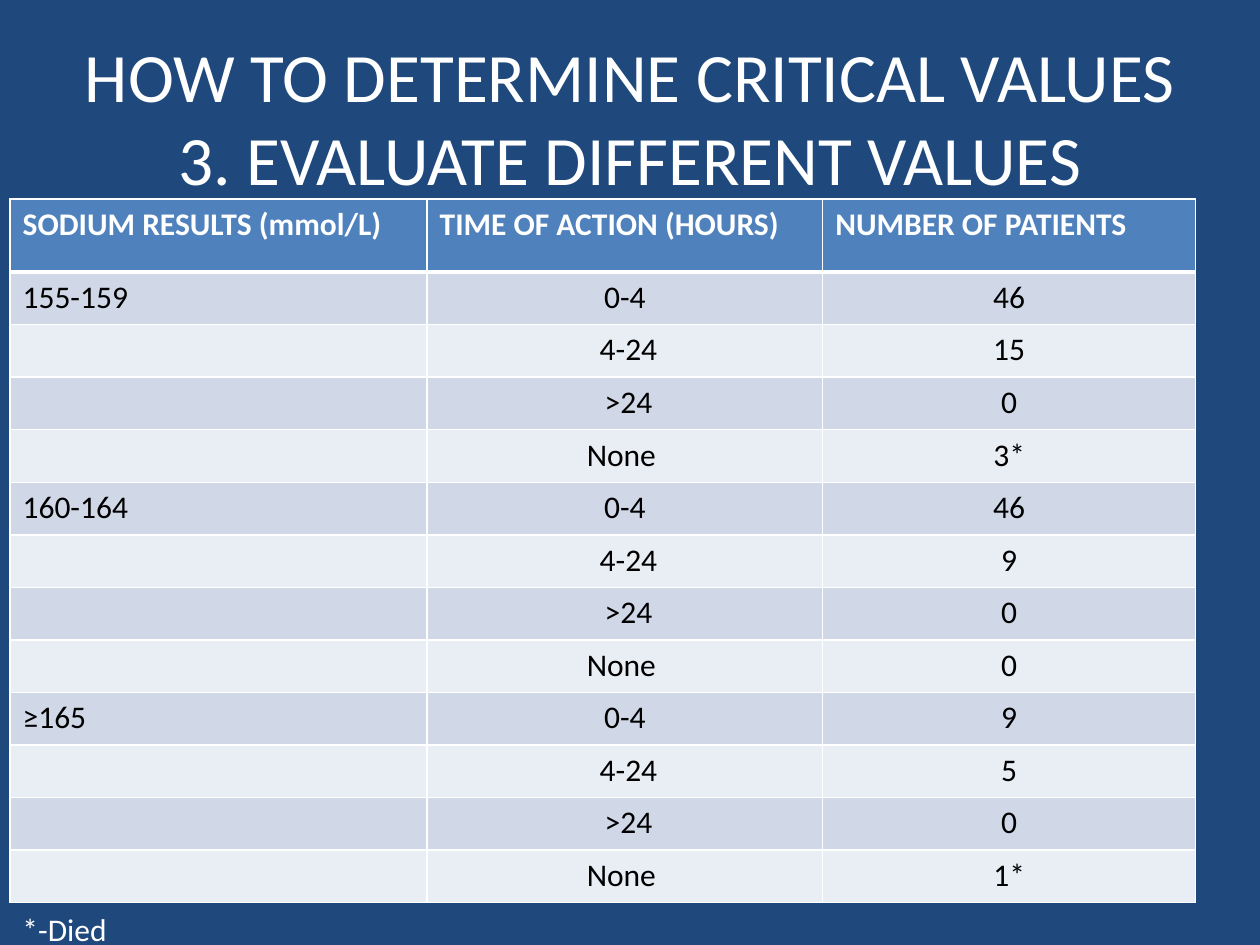
from dataclasses import dataclass
from typing import Any

from lxml import etree
from pptx import Presentation
from pptx import util as u
from pptx.dml.color import RGBColor
from pptx.enum import text
from pptx.oxml import ns

NAVY = RGBColor(0x1F, 0x49, 0x7D)
BLUE = RGBColor(0x4F, 0x81, 0xBD)
BAND_DARK = RGBColor(0xD0, 0xD8, 0xE8)
BAND_LIGHT = RGBColor(0xE9, 0xED, 0xF4)
WHITE = RGBColor(0xFF, 0xFF, 0xFF)
BLACK = RGBColor(0, 0, 0)

TITLE_LINES = ["HOW TO DETERMINE CRITICAL VALUES", "3. EVALUATE DIFFERENT VALUES"]
HEADINGS = ["SODIUM RESULTS (mmol/L)", "TIME OF ACTION (HOURS)", "NUMBER OF PATIENTS"]
ACTION_TIMES = ["0-4", " 4-24", " >24", "None "]
PATIENTS = {
    "155-159": ["46", "15", "0", "3*"],
    "160-164": ["46", "9", "0", "0"],
    "≥165": ["9", "5", "0", "1*"],
}


@dataclass
class SlideBuilder:
    page: Any
    font: str = "Calibri"
    size: float = 18

    def add_span(self, para, words, color, size=None, bold=False):
        span = para.add_run()
        span.text = words
        span.font.name = self.font
        span.font.size = u.Pt(size or self.size)
        span.font.color.rgb = color
        span.font.bold = bold

    def set_title(self, lines, left, top, width, height, size):
        title = self.page.shapes.title
        title.left, title.top = u.Inches(left), u.Inches(top)
        title.width, title.height = u.Inches(width), u.Inches(height)
        frame = title.text_frame
        frame.auto_size = text.MSO_AUTO_SIZE.NONE
        frame.vertical_anchor = text.MSO_ANCHOR.MIDDLE
        para = frame.paragraphs[0]
        para.alignment = text.PP_ALIGN.CENTER
        for index, line in enumerate(lines):
            if index:
                para.add_line_break()
            self.add_span(para, line, WHITE, size)

    def add_note(self, words, left, top, width, height):
        box = self.page.shapes.add_textbox(
            u.Inches(left), u.Inches(top), u.Inches(width), u.Inches(height))
        box.text_frame.word_wrap = False
        box.text_frame.auto_size = text.MSO_AUTO_SIZE.SHAPE_TO_FIT_TEXT
        self.add_span(box.text_frame.paragraphs[0], words, WHITE)

    def set_borders(self, cell, top, bottom):
        properties = cell._tc.get_or_add_tcPr()
        for side, points in (("L", 1), ("R", 1), ("T", top), ("B", bottom)):
            line = etree.SubElement(
                properties, ns.qn(f"a:ln{side}"), w=str(u.Pt(points)))
            fill = etree.SubElement(line, ns.qn("a:solidFill"))
            etree.SubElement(fill, ns.qn("a:srgbClr"), val=str(WHITE))

    def add_table(self, rows, left, top, widths, header_height, row_height):
        height = header_height + row_height * (len(rows) - 1)
        table = self.page.shapes.add_table(
            len(rows), len(widths), u.Inches(left), u.Inches(top),
            u.Inches(sum(widths)), u.Inches(height)).table
        for column, width in zip(table.columns, widths):
            column.width = u.Inches(width)
        for r, row in enumerate(rows):
            header = r == 0
            table.rows[r].height = u.Inches(header_height if header else row_height)
            band = BLUE if header else BAND_DARK if r % 2 else BAND_LIGHT
            for c, words in enumerate(row):
                cell = table.cell(r, c)
                # The rule under the header is thicker than the others
                self.set_borders(cell, 3 if r == 1 else 1, 3 if header else 1)
                cell.fill.solid()
                cell.fill.fore_color.rgb = band
                para = cell.text_frame.paragraphs[0]
                para.font.size = u.Pt(self.size)
                if c and not header:
                    para.alignment = text.PP_ALIGN.CENTER
                if words:
                    self.add_span(para, words, WHITE if header else BLACK, bold=header)


def main():
    deck = Presentation()
    deck.slide_width, deck.slide_height = u.Inches(10), u.Inches(7.5)
    page = deck.slides.add_slide(deck.slide_layouts[5])
    page.background.fill.solid()
    page.background.fill.fore_color.rgb = NAVY
    builder = SlideBuilder(page)

    # Title
    builder.set_title(TITLE_LINES, 0.5, 0.3, 9, 1.25, 39.6)

    # Results: the sodium range shows only on the first row of its group
    rows = [HEADINGS]
    for sodium, counts in PATIENTS.items():
        for index, (time, count) in enumerate(zip(ACTION_TIMES, counts)):
            rows.append(["" if index else sodium, time, count])
    builder.add_table(rows, 0.08, 1.58, [3.31, 3.14, 2.96], 0.58, 0.417)

    # Footnote
    builder.add_note("*-Died", 0.08, 7.17, 0.88, 0.4)

    deck.save("out.pptx")


if __name__ == "__main__":
    main()
